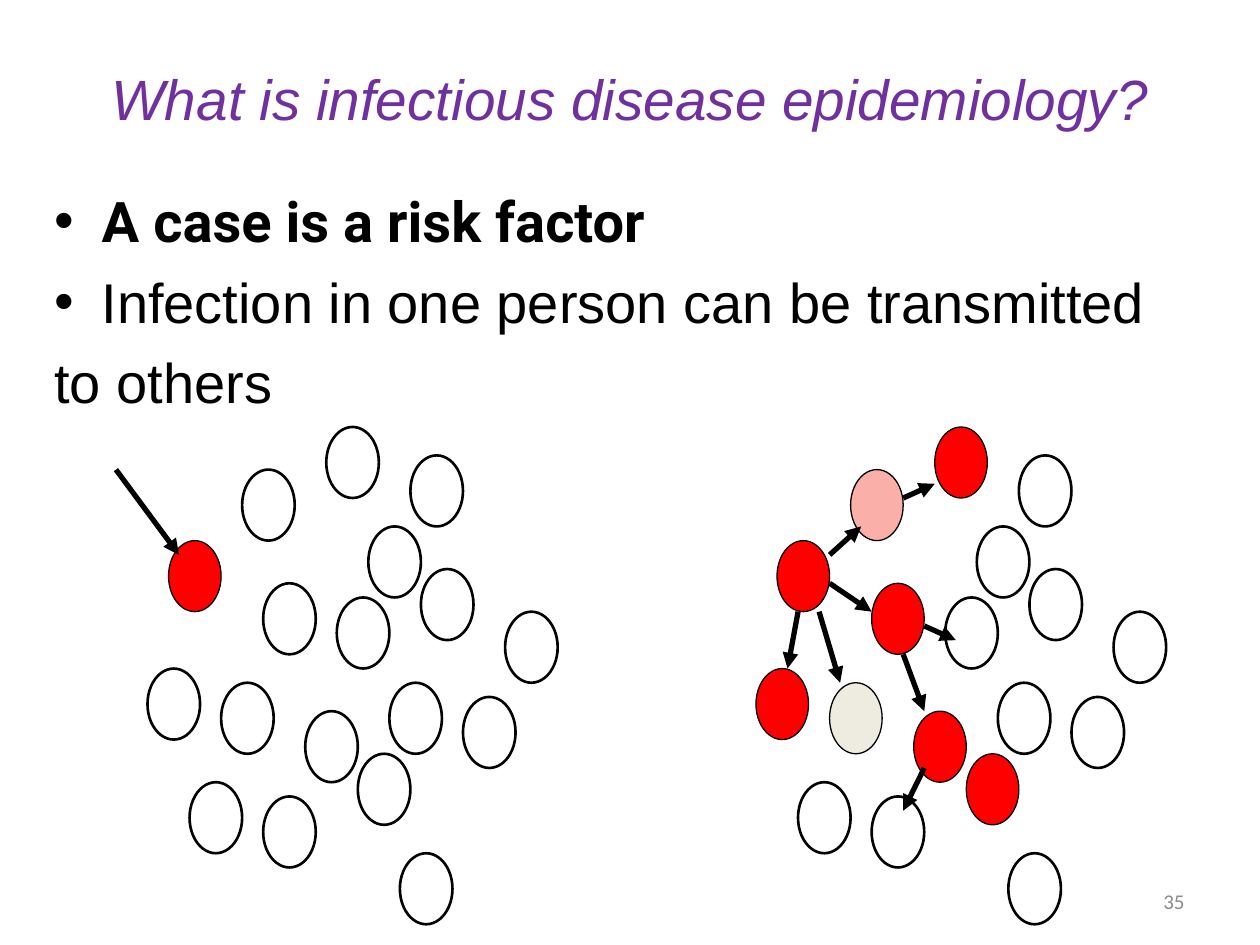
from lxml import etree
from pptx import Presentation
from pptx.dml.color import RGBColor
from pptx.enum.shapes import MSO_CONNECTOR, MSO_SHAPE
from pptx.enum.text import MSO_ANCHOR, PP_ALIGN
from pptx.oxml.ns import qn
from pptx.util import Pt

STEP_X, STEP_Y = 6.01, 8.12
PEOPLE = [(2, 8), (9, 3), (21, 7), (20, 23), (24, 30), (11, 11), (17, 0), (25, 2),
          (26, 10), (30, 19), (34, 13), (11, 26), (4, 25), (23, 18), (15, 20),
          (7, 18), (18, 12), (0, 17)]
FIRST_CASE = {(2, 8): "FF0000"}
SPREAD = FIRST_CASE | {(20, 23): "FF0000", (11, 11): "FF0000", (17, 0): "FF0000",
                       (15, 20): "FF0000", (0, 17): "FF0000",
                       (9, 3): "FBAFA9", (7, 18): "EEECE1"}
ENTRY = [((-3, 3), (3, 9))]
TRANSMISSIONS = [((4, 13), (3, 17)), ((7, 11), (11, 13)), ((14, 16), (16, 20)),
                 ((7, 9), (10, 7)), ((14, 5), (17, 4)), ((16, 14), (19, 15)),
                 ((16, 24), (14, 27)), ((6, 13), (8, 18))]


def rgb(value):
    return RGBColor.from_string(value)


def place(sp, box):
    sp.left, sp.top, sp.width, sp.height = (Pt(v) for v in box)


def format_run(p, font, size, color, bold=False, italic=False):
    f = p.runs[0].font
    f.name, f.size, f.bold, f.italic = font, Pt(size), bold, italic
    f.color.rgb = rgb(color)


def add_title(s, box, text):
    sp = s.shapes.title
    place(sp, box)
    tf = sp.text_frame
    tf.text = text
    tf.vertical_anchor = MSO_ANCHOR.MIDDLE
    p = tf.paragraphs[0]
    p.alignment = PP_ALIGN.CENTER
    format_run(p, "Arial", 32.4, "7030A0", italic=True)


def add_bullet(p, indent):
    pPr = p._p.get_or_add_pPr()
    pPr.set("marL", str(Pt(indent)))
    pPr.set("indent", str(-Pt(indent)))
    etree.SubElement(pPr, qn("a:buFont")).set("typeface", "Arial")
    etree.SubElement(pPr, qn("a:buChar")).set("char", "•")


def add_body(s, box, lines):
    tf = s.shapes.add_textbox(*(Pt(v) for v in box)).text_frame
    tf.word_wrap = True
    for i, (text, font, bold, bullet) in enumerate(lines):
        p = tf.add_paragraph() if i else tf.paragraphs[0]
        p.text = text
        p.space_before = Pt(7.7)
        format_run(p, font, 32, "000000", bold=bold)
        if bullet:
            add_bullet(p, 27)


def add_person(s, x, y, fill):
    sp = s.shapes.add_shape(MSO_SHAPE.OVAL, Pt(x), Pt(y), Pt(5 * STEP_X), Pt(5 * STEP_Y))
    sp.shadow.inherit = False
    sp.line.color.rgb = rgb("000000")
    if fill:
        sp.fill.solid()
        sp.fill.fore_color.rgb = rgb(fill)
        sp.line.width = Pt(0.75)
    else:
        sp.fill.background()
        sp.line.width = Pt(1.5)


def add_arrow(s, start, end):
    sp = s.shapes.add_connector(MSO_CONNECTOR.STRAIGHT, *(Pt(v) for v in start + end))
    sp.line.color.rgb = rgb("000000")
    sp.line.width = Pt(3)
    etree.SubElement(sp.line._get_or_add_ln(), qn("a:tailEnd")).set("type", "triangle")
    etree.SubElement(sp._element.spPr, qn("a:effectLst"))


def add_population(s, left, top, cases, arrows):
    def at(point):
        return left + point[0] * STEP_X, top + point[1] * STEP_Y

    for person in PEOPLE:
        add_person(s, *at(person), cases.get(person))
    for start, end in arrows:
        add_arrow(s, at(start), at(end))


def add_slide_number(s, box, text):
    tf = s.shapes.add_textbox(*(Pt(v) for v in box)).text_frame
    tf.word_wrap = True
    tf.vertical_anchor = MSO_ANCHOR.MIDDLE
    tf.text = text
    p = tf.paragraphs[0]
    p.alignment = PP_ALIGN.RIGHT
    format_run(p, "Calibri", 12, "8C8C8C")


def main():
    prs = Presentation()
    prs.slide_width, prs.slide_height = Pt(720), Pt(540)
    s = prs.slides.add_slide(prs.slide_layouts[5])
    add_title(s, (36, 21.6, 648, 68.4), "What is infectious disease epidemiology?")
    add_body(s, (24, 103, 660, 356), [
        ("A case is a risk factor", "Roboto", True, True),
        ("Infection in one person can be transmitted", "Arial", False, True),
        ("to others", "Arial", False, False),
    ])
    add_population(s, 84.3, 244, FIRST_CASE, ENTRY)
    add_population(s, 432, 244, SPREAD, TRANSMISSIONS)
    add_slide_number(s, (516, 500.4, 168, 28.8), "35")
    prs.save("out.pptx")


if __name__ == "__main__":
    main()
